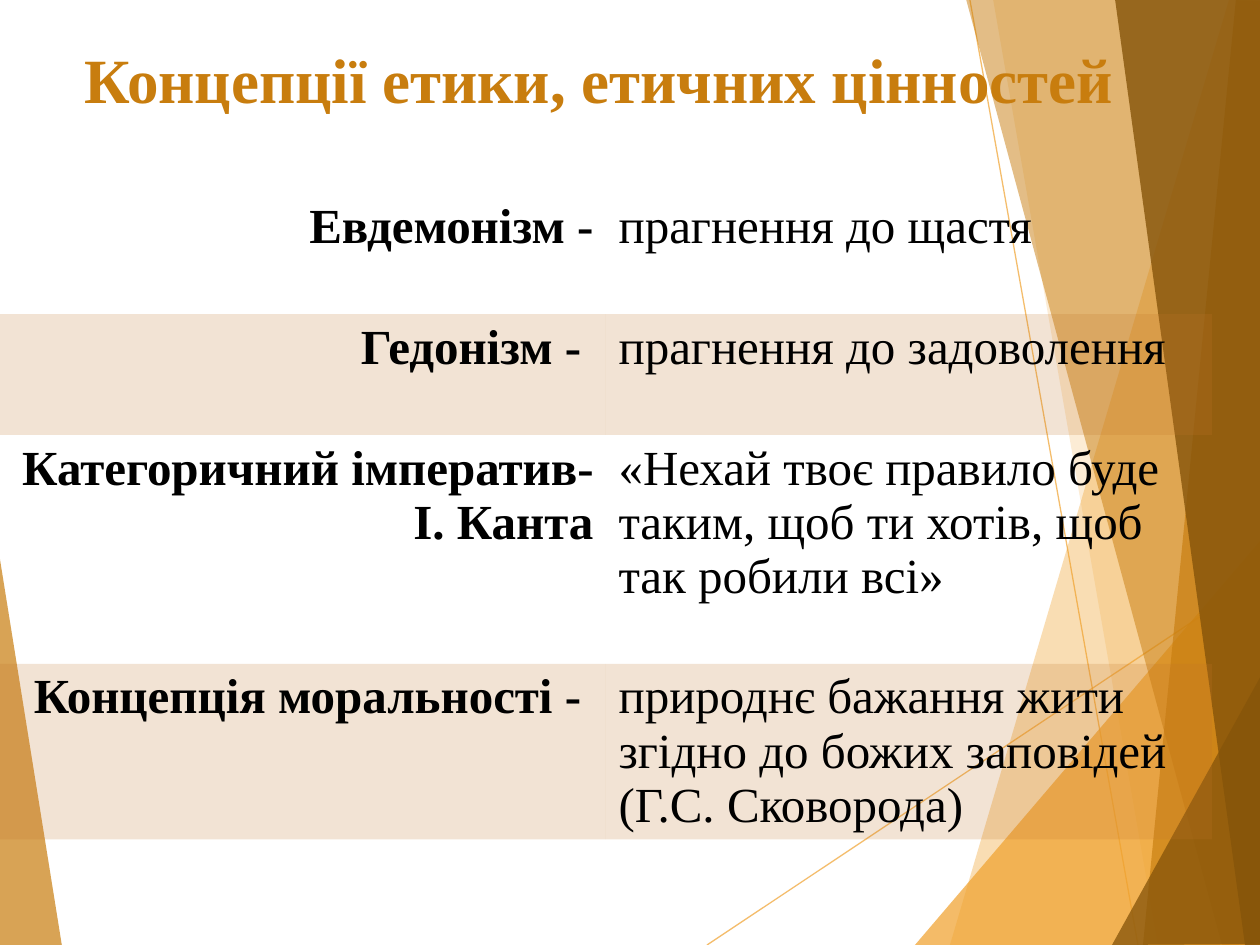
import dataclasses

import pptx
import pptx.dml.color
import pptx.enum.text
import pptx.oxml
import pptx.oxml.ns
import pptx.util

SCALE = 914400 / 126
FONT = "Times New Roman"
GOLD, AMBER, BROWN = "F0A22E", "C87D0E", "85540A"
PLAIN = "{2D5ABB26-0587-4C30-8999-92F81FD0307C}"
ALIGN = pptx.enum.text.PP_ALIGN


@dataclasses.dataclass
class Facet:
    """A see-through polygon of the backdrop."""
    points: list[tuple[int, int]]
    color: str
    alpha: int


@dataclasses.dataclass
class Ray:
    """A thin line of the backdrop."""
    start: tuple[int, int]
    end: tuple[int, int]


@dataclasses.dataclass
class Idea:
    """One table row: a concept, its meaning and its height."""
    name: str
    sense: str
    height: int


RAYS = [Ray((707, 945), (1261, 576)), Ray((970, 0), (1138, 945))]
FACETS = [
    Facet([(1229, 0), (950, 945), (1262, 946), (1261, 1)], GOLD, 36),
    Facet([(993, -1), (1158, 945), (1261, 945), (1261, -1)], GOLD, 20),
    Facet([(915, 945), (1260, 541), (1261, 945)], GOLD, 72),
    Facet([(966, -1), (1222, 945), (1261, 944), (1261, -1)], AMBER, 50),
    Facet([(1236, -1), (1143, 945), (1261, 945), (1260, -1)], AMBER, 66),
    Facet([(1115, -1), (1245, 945), (1262, 945), (1260, -1)], BROWN, 80),
    Facet([(1112, 945), (1262, 674), (1262, 944)], BROWN, 76),
    Facet([(-1, 553), (62, 946), (-1, 945)], AMBER, 70),
]
IDEAS = [
    Idea("Евдемонізм -", "прагнення до щастя", 121),
    Idea("Гедонізм - ", "прагнення до задоволення", 121),
    Idea("Категоричний імператив- \nІ. Канта",
         "«Нехай твоє правило буде таким, щоб ти хотів, щоб так робили всі»", 229),
    Idea("Концепція моральності - ",
         "природнє бажання жити згідно до божих заповідей (Г.С. Сковорода)", 175),
]


def px(n: int) -> int:
    """Turn px into EMU."""
    return pptx.util.Emu(round(n * SCALE))


def rgb(code: str) -> pptx.dml.color.RGBColor:
    """Turn a hex string into a colour."""
    return pptx.dml.color.RGBColor.from_string(code)


def tint(fill, code: str, alpha: int) -> None:
    """Fill with a colour at a given opacity in percent."""
    fill.solid()
    fill.fore_color.rgb = rgb(code)
    node = fill._xPr.find(".//" + pptx.oxml.ns.qn("a:srgbClr"))
    pptx.oxml.ns.qn("a:alpha")
    node.append(pptx.oxml.parse_xml(
        f'<a:alpha {pptx.oxml.ns.nsdecls("a")} val="{alpha * 1000}"/>'))


def style(par, size: int, code: str, bold: bool, align) -> None:
    """Set the font and alignment of a paragraph."""
    par.alignment = align
    par.font.name = FONT
    par.font.size = pptx.util.Pt(size)
    par.font.bold = bold
    par.font.color.rgb = rgb(code)


def draw_ray(slide, ray: Ray) -> None:
    """Draw a thin gold line."""
    line = slide.shapes.add_connector(1, *map(px, ray.start + ray.end))
    line.line.width = pptx.util.Pt(0.75)
    tint(line.line.fill, GOLD, 70)
    line._element.spPr.append(pptx.oxml.parse_xml(
        f'<a:effectLst {pptx.oxml.ns.nsdecls("a")}/>'))


def draw_facet(slide, facet: Facet) -> None:
    """Draw a polygon without an outline."""
    first, *rest = facet.points
    pen = slide.shapes.build_freeform(*first, scale=SCALE)
    pen.add_line_segments(rest, close=True)
    shape = pen.convert_to_shape()
    shape.shadow.inherit = False
    tint(shape.fill, facet.color, facet.alpha)
    shape.line.fill.background()


def draw_title(slide, text: str) -> None:
    """Place the title in front of the backdrop."""
    title = slide.shapes.title
    slide.shapes._spTree.append(title._element)
    title.left, title.top, title.width, title.height = map(px, (72, 26, 1140, 181))
    frame = title.text_frame
    frame.text = text
    frame.auto_size = pptx.enum.text.MSO_AUTO_SIZE.NONE
    frame.vertical_anchor = pptx.enum.text.MSO_ANCHOR.TOP
    frame.margin_top = px(15)
    style(frame.paragraphs[0], 36, AMBER, True, ALIGN.LEFT)


def draw_table(slide, ideas: list[Idea]) -> None:
    """Draw the concepts with every second row shaded."""
    height = sum(idea.height for idea in ideas)
    frame = slide.shapes.add_table(len(ideas), 2, *map(px, (0, 193, 1212, height)))
    table = frame.table
    table.first_row = table.horz_banding = False
    table._tbl.tblPr.find(pptx.oxml.ns.qn("a:tableStyleId")).text = PLAIN
    for row, idea in enumerate(ideas):
        table.rows[row].height = px(idea.height)
        for col, text in enumerate((idea.name, idea.sense)):
            cell = table.cell(row, col)
            cell.text = text
            for par in cell.text_frame.paragraphs:
                style(par, 28, "000000", col == 0, ALIGN.LEFT if col else ALIGN.RIGHT)
            if row % 2:
                tint(cell.fill, "C17529", 20)
            else:
                cell.fill.background()


def main() -> None:
    """Build and save the slide."""
    deck = pptx.Presentation()
    deck.slide_width, deck.slide_height = px(1260), px(945)
    slide = deck.slides.add_slide(deck.slide_layouts[5])
    for ray in RAYS:
        draw_ray(slide, ray)
    for facet in FACETS:
        draw_facet(slide, facet)
    draw_title(slide, "Концепції етики, етичних цінностей")
    draw_table(slide, IDEAS)
    deck.save("out.pptx")


if __name__ == "__main__":
    main()
